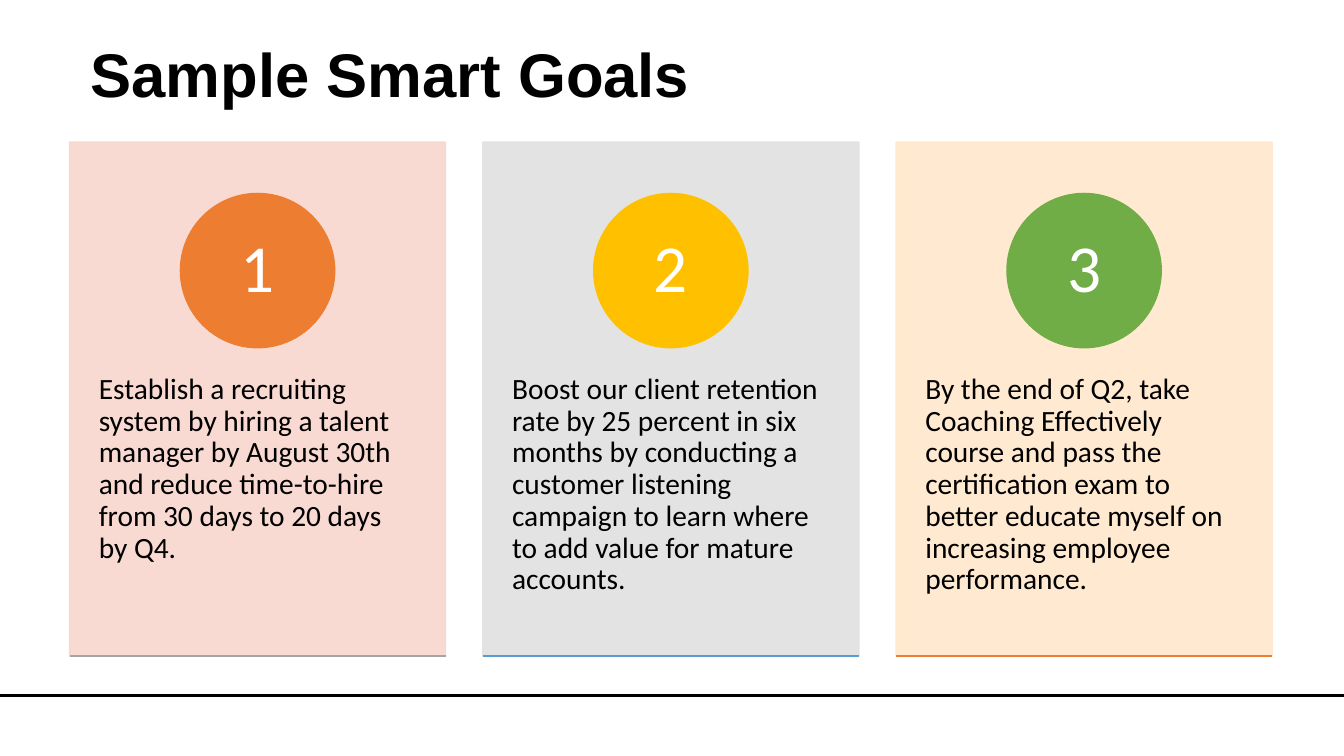
from dataclasses import dataclass
from pptx import Presentation
from pptx.dml.color import RGBColor
from pptx.enum import shapes, text
from pptx.oxml.ns import qn
from pptx.util import Pt
from lxml import etree

TITLE = "Sample Smart Goals"
# goal, card colour, circle colour, bottom edge colour
GOALS = [
    ("Establish a recruiting system by hiring a talent manager by August 30th "
     "and reduce time-to-hire from 30 days to 20 days by Q4.",
     "F8D7CE", "ED7D31", "A5A5A5"),
    ("Boost our client retention rate by 25 percent in six months by conducting "
     "a customer listening campaign to learn where to add value for mature accounts.",
     "E1E1E1", "FFC000", "5B9BD5"),
    ("By the end of Q2, take Coaching Effectively course and pass the certification "
     "exam to better educate myself on increasing employee performance.",
     "FFE8CC", "70AD47", "ED7D31"),
]


@dataclass(frozen=True)
class Theme:
    heading: str = "Arial"
    body: str = "Calibri"
    ink: str = "000000"
    paper: str = "FFFFFF"
    title_size: int = 44
    number_size: int = 48
    goal_size: int = 21
    card_opacity: int = 90


T = Theme()
SLIDE_W, SLIDE_H = 960, 540
CARD_X, CARD_Y, CARD_W, CARD_H = 49.7, 101.5, 268.6, 367.2
CARD_PITCH = 295.2
CIRCLE, CIRCLE_Y = 110.2, 138.2
GOAL_Y, GOAL_H = 241.2, 220.3
RULE_Y = 496.8


def write(tf, words, size, color, font, align, anchor, margins, bold=False):
    tf.word_wrap = True
    tf.auto_size = text.MSO_AUTO_SIZE.NONE
    tf.vertical_anchor = anchor
    tf.margin_left = tf.margin_right = Pt(margins[0])
    tf.margin_top = tf.margin_bottom = Pt(margins[1])
    tf.text = words
    p = tf.paragraphs[0]
    p.alignment = align
    p.line_spacing = 0.9
    p.font.size, p.font.name, p.font.bold = Pt(size), font, bold
    p.font.color.rgb = RGBColor.from_string(color)


def add_block(s, kind, x, y, w, h, color, opacity=100):
    sp = s.shapes.add_shape(kind, Pt(x), Pt(y), Pt(w), Pt(h))
    sp.shadow.inherit = False
    sp.fill.solid()
    sp.fill.fore_color.rgb = sp.line.color.rgb = RGBColor.from_string(color)
    sp.line.width = Pt(1)
    if opacity < 100:
        for clr in sp._element.spPr.iter(qn("a:srgbClr")):
            etree.SubElement(clr, qn("a:alpha")).set("val", str(opacity * 1000))
    return sp


def add_rule(s, x, y, w, color, weight):
    line = s.shapes.add_connector(shapes.MSO_CONNECTOR.STRAIGHT,
                                  Pt(x), Pt(y), Pt(x + w), Pt(y))
    line.line.color.rgb = RGBColor.from_string(color)
    line.line.width = Pt(weight)
    etree.SubElement(line._element.spPr, qn("a:effectLst"))


def add_goal(s, index, goal, card, circle, edge):
    x = CARD_X + index * CARD_PITCH
    add_block(s, shapes.MSO_SHAPE.RECTANGLE, x, CARD_Y, CARD_W, CARD_H,
              card, T.card_opacity)
    box = s.shapes.add_textbox(Pt(x), Pt(GOAL_Y), Pt(CARD_W), Pt(GOAL_H))
    write(box.text_frame, goal, T.goal_size, T.ink, T.body,
          text.PP_ALIGN.LEFT, text.MSO_ANCHOR.TOP, (20.9, 25.9))
    disc = add_block(s, shapes.MSO_SHAPE.OVAL, x + (CARD_W - CIRCLE) / 2,
                     CIRCLE_Y, CIRCLE, CIRCLE, circle)
    write(disc.text_frame, str(index + 1), T.number_size, T.paper, T.body,
          text.PP_ALIGN.CENTER, text.MSO_ANCHOR.MIDDLE, (8.6, 0.7))
    add_rule(s, x, CARD_Y + CARD_H, CARD_W, edge, 1)


def main():
    prs = Presentation()
    prs.slide_width, prs.slide_height = Pt(SLIDE_W), Pt(SLIDE_H)
    s = prs.slides.add_slide(prs.slide_layouts[5])
    add_rule(s, 0, RULE_Y, SLIDE_W, T.ink, 2)
    title = s.shapes.title
    title.left, title.top, title.width, title.height = map(Pt, (57.6, 28.1, 828, 104.4))
    write(title.text_frame, TITLE, T.title_size, T.ink, T.heading,
          text.PP_ALIGN.LEFT, text.MSO_ANCHOR.TOP, (7.2, 3.6), bold=True)
    for i, goal in enumerate(GOALS):
        add_goal(s, i, *goal)
    prs.save("out.pptx")


if __name__ == "__main__":
    main()
